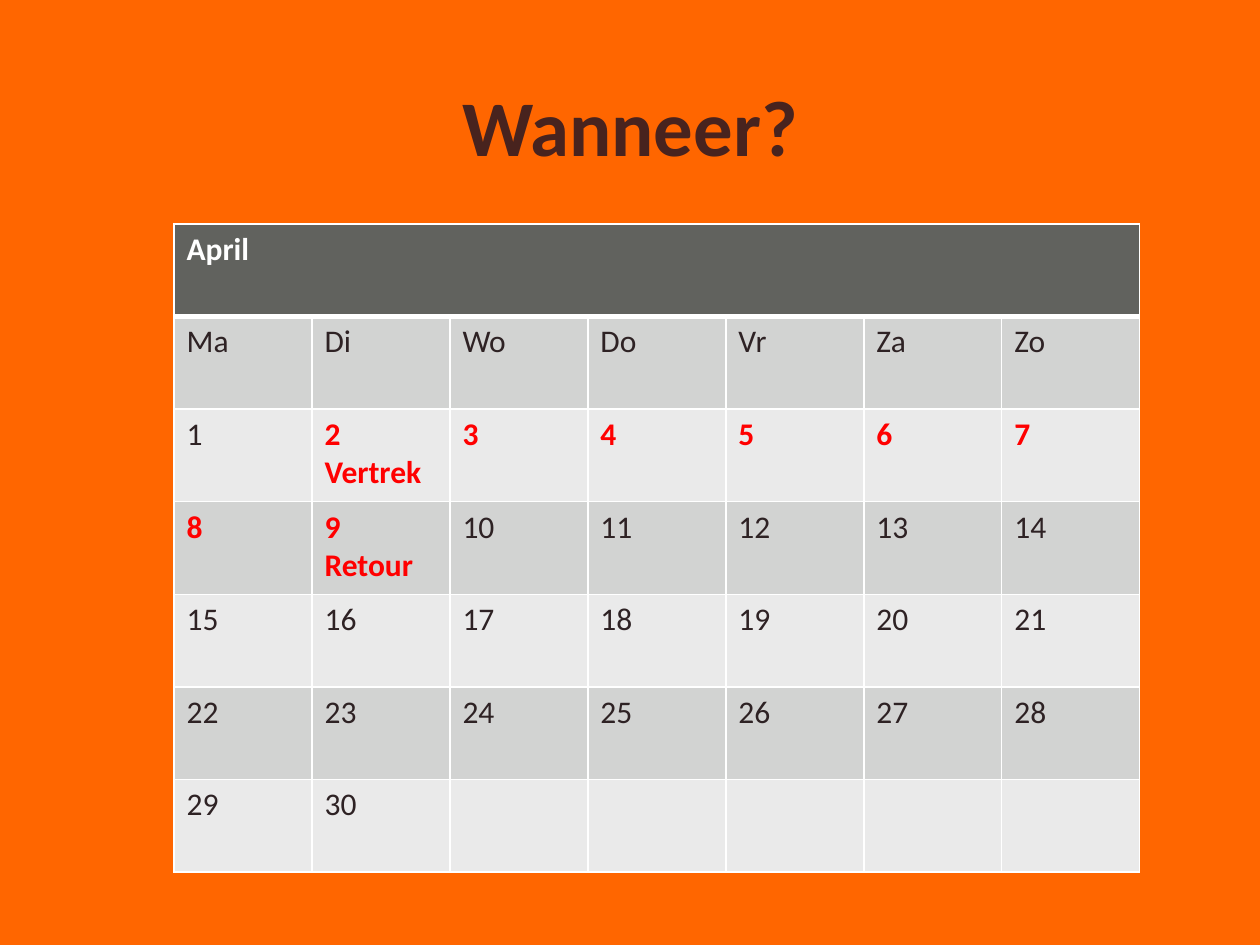
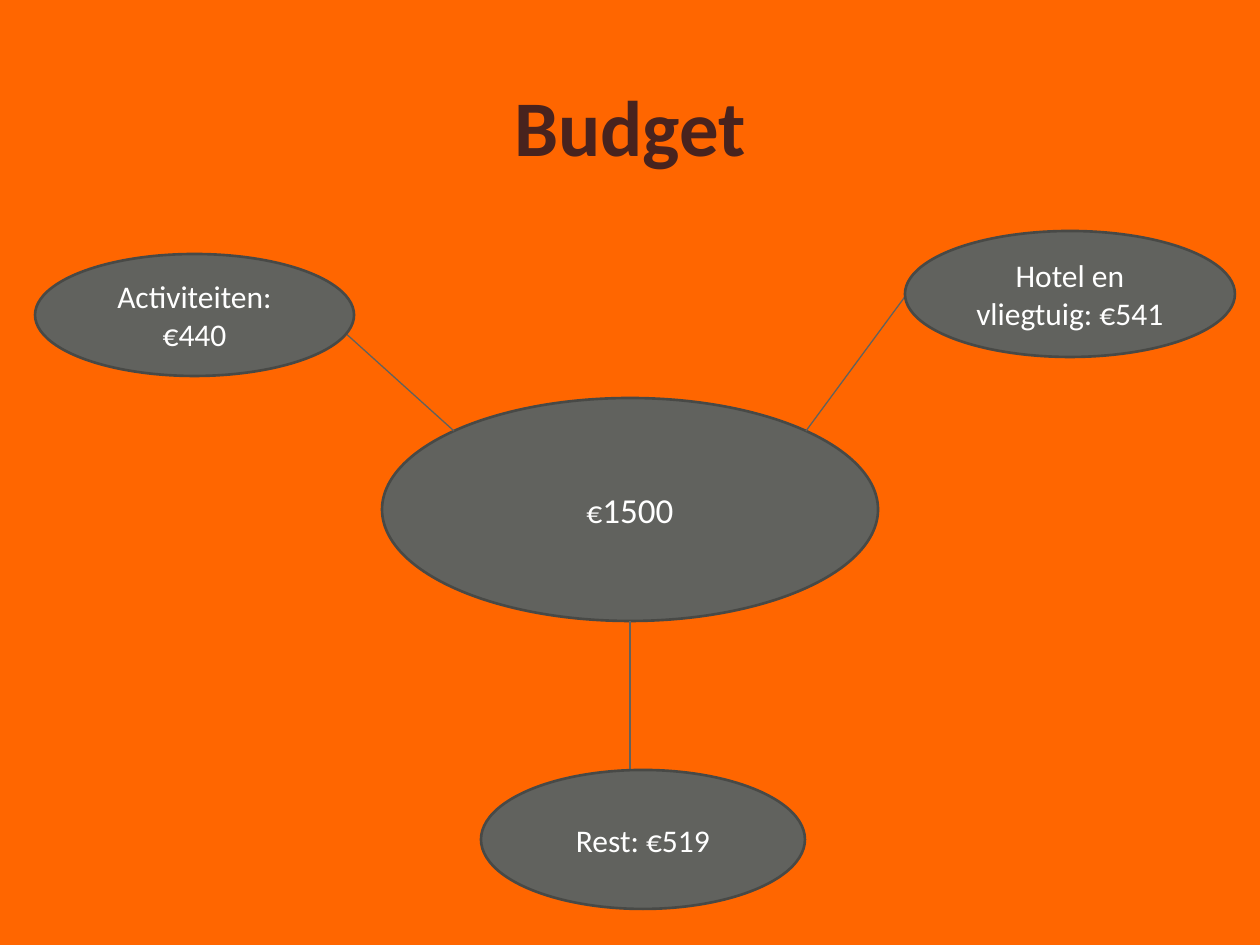
from dataclasses import dataclass

from lxml import etree
from pptx import Presentation
from pptx import util as u
from pptx.dml.color import RGBColor
from pptx.enum import shapes, text
from pptx.oxml.ns import qn

SIZE = (1260, 945)
PX = u.Inches(10) / SIZE[0]

TITLE = (38, 32, 1184, 147)

# Calendar
MONTH = "April"
DAYS = ["Ma", "Di", "Wo", "Do", "Vr", "Za", "Zo"]
LAST = 30
TRIP = range(2, 10)
NOTES = {2: "Vertrek", 9: "Retour"}
GRID = (174, 224, 966, 648)

# Budget: the hub, then each part with the ends of its line
HUB = ([("€", 18), ("1500", 20)], (382, 398, 496, 223))
PARTS = [
    ("Hotel en vliegtuig: €541", (905, 231, 330, 126), (806, 431, 907, 294)),
    ("Rest: €519", (481, 770, 324, 139), (630, 621, 630, 770)),
    ("Activiteiten: €440", (35, 254, 319, 122), (454, 431, 302, 294)),
]


@dataclass(frozen=True)
class Theme:
    font: str = "Calibri"
    back: str = "FF6600"
    title: str = "48231E"
    gray: str = "61625E"
    edge: str = "484946"
    ink: str = "2E2224"
    white: str = "FFFFFF"
    red: str = "FF0000"
    bands: tuple = ("EAEAEA", "D2D3D2")
    head: int = 45
    body: int = 18


T = Theme()


def px(vals):
    return [round(v * PX) for v in vals]


def paint(fill, color):
    fill.solid()
    fill.fore_color.rgb = RGBColor.from_string(color)


def style(font, size, color, bold=False):
    font.name, font.size, font.bold = T.font, u.Pt(size), bold
    font.color.rgb = RGBColor.from_string(color)


def start(prs, words):
    """Add a slide with its title."""
    slide = prs.slides.add_slide(prs.slide_layouts[5])
    box = slide.shapes.title
    box.left, box.top, box.width, box.height = px(TITLE)
    frame = box.text_frame
    frame.text = words
    frame.auto_size = text.MSO_AUTO_SIZE.NONE
    frame.vertical_anchor = text.MSO_ANCHOR.BOTTOM
    para = frame.paragraphs[0]
    para.alignment = text.PP_ALIGN.CENTER
    para.space_before = u.Pt(4)
    style(para.font, T.head, T.title, True)
    return slide


def border(cell, **widths):
    """Draw the four white cell borders; widths are in points."""
    props = cell._tc.get_or_add_tcPr()
    for side in "LRTB":
        line = etree.SubElement(props, qn("a:ln" + side),
                                w=str(u.Pt(widths.get(side, 1))))
        fill = etree.SubElement(line, qn("a:solidFill"))
        etree.SubElement(fill, qn("a:srgbClr"), val=T.white)


def write(cell, words, color, bold):
    cell.text = words
    for para in cell.text_frame.paragraphs:
        style(para.font, T.body, color, bold)


def month(slide):
    wide = len(DAYS)
    weeks = -(-LAST // wide)
    rows = weeks + 2
    table = slide.shapes.add_table(rows, wide, *px(GRID)).table
    for row in table.rows:
        row.height = round(GRID[3] * PX / rows)
    for r in range(rows):
        for c in range(wide):
            cell = table.cell(r, c)
            border(cell, **({"B": 3} if r == 0 else {"T": 3} if r == 1 else {}))
            paint(cell.fill, T.bands[r % 2] if r else T.gray)
            if r == 1:
                write(cell, DAYS[c], T.ink, False)
            day = (r - 2) * wide + c + 1
            if r > 1 and day <= LAST:
                words = f"{day}\n{NOTES[day]}" if day in NOTES else str(day)
                away = day in TRIP
                write(cell, words, T.red if away else T.ink, away)
    top = table.cell(0, 0)
    top.merge(table.cell(0, wide - 1))
    write(top, MONTH, T.white, True)


def oval(slide, runs, place):
    shape = slide.shapes.add_shape(shapes.MSO_SHAPE.OVAL, *px(place))
    shape.shadow.inherit = False
    paint(shape.fill, T.gray)
    paint(shape.line.fill, T.edge)
    shape.line.width = u.Pt(1.5)
    frame = shape.text_frame
    frame.word_wrap = True
    frame.vertical_anchor = text.MSO_ANCHOR.MIDDLE
    para = frame.paragraphs[0]
    para.alignment = text.PP_ALIGN.CENTER
    for words, size in runs:
        run = para.add_run()
        run.text = words
        style(run.font, size, T.white)


def link(slide, ends):
    line = slide.shapes.add_connector(shapes.MSO_CONNECTOR.STRAIGHT, *px(ends))
    paint(line.line.fill, T.gray)
    line.line.width = u.Pt(0.75)
    etree.SubElement(line._element.spPr, qn("a:effectLst"))


def budget(slide):
    oval(slide, *HUB)
    for words, place, ends in PARTS:
        link(slide, ends)
        oval(slide, [(words, T.body)], place)


def main():
    prs = Presentation()
    prs.slide_width, prs.slide_height = px(SIZE)
    paint(prs.slide_master.background.fill, T.back)
    month(start(prs, "Wanneer?"))
    budget(start(prs, "Budget"))
    prs.save("out.pptx")


if __name__ == "__main__":
    main()
